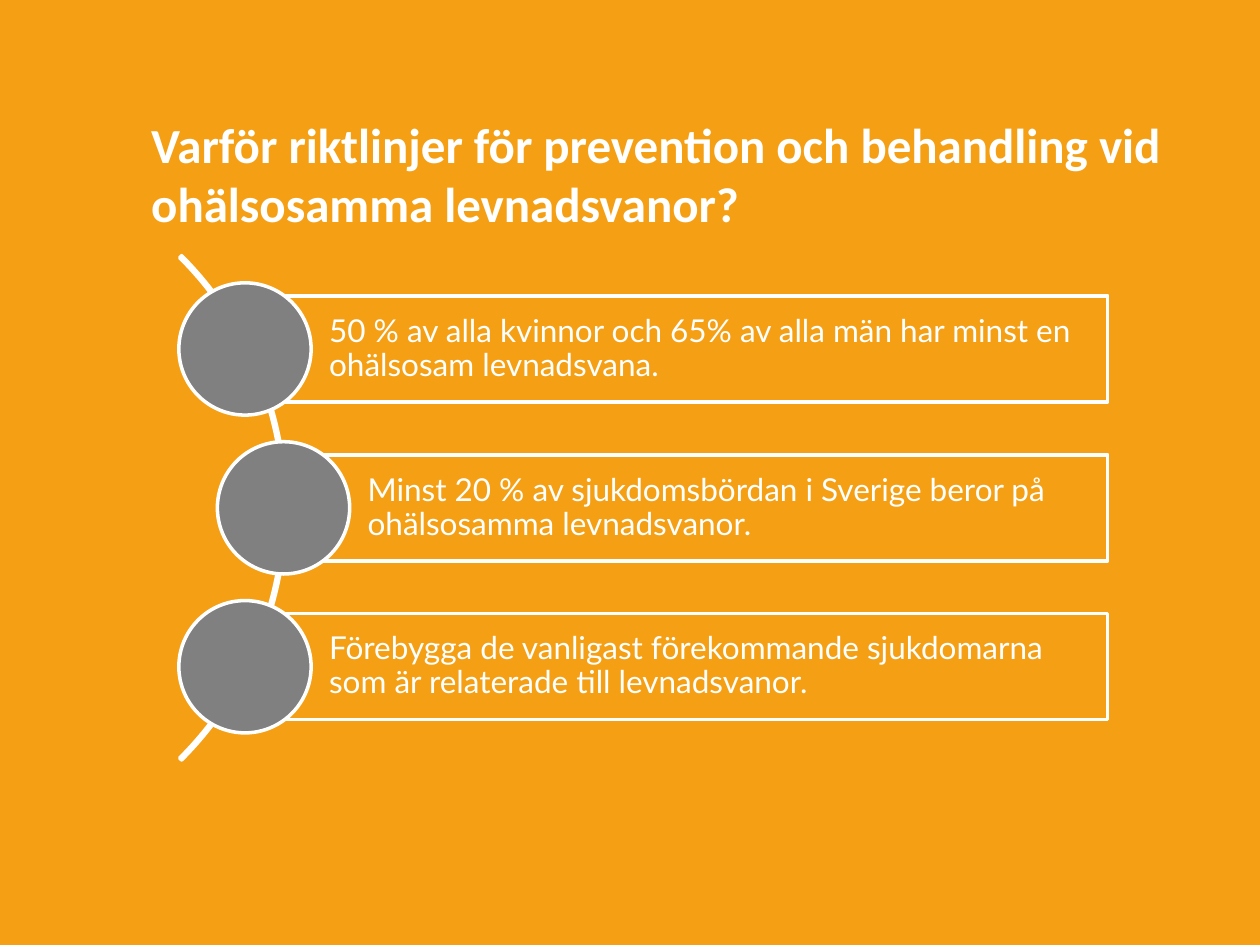
"""Build the slide on why there are guidelines for unhealthy living habits."""
from dataclasses import dataclass

from pptx import Presentation
from pptx.dml.color import RGBColor
from pptx.enum.shapes import MSO_SHAPE
from pptx.enum.text import MSO_ANCHOR, MSO_AUTO_SIZE, PP_ALIGN
from pptx.util import Pt

ARC, CIRCLE, BOX = MSO_SHAPE.BLOCK_ARC, MSO_SHAPE.OVAL, MSO_SHAPE.RECTANGLE
TOP, MIDDLE = MSO_ANCHOR.TOP, MSO_ANCHOR.MIDDLE
LEFT, NO_FIT = PP_ALIGN.LEFT, MSO_AUTO_SIZE.NONE

TITLE = "Varför riktlinjer för prevention och behandling vid ohälsosamma levnadsvanor?"
REASONS = [
    "50 % av alla kvinnor och 65% av alla män har minst en ohälsosam levnadsvana.",
    "Minst 20 % av sjukdomsbördan i Sverige beror på ohälsosamma levnadsvanor.",
    "Förebygga de vanligast förekommande sjukdomarna som är relaterade till levnadsvanor.",
]
CIRCLE_CENTERS_X = [140, 162, 140]
FIRST_CENTER_Y = 199.4
ROW_PITCH = 90.8
BOX_RIGHT = 633
BOX_HEIGHT = 60.6
CIRCLE_SIZE = 75.6
ARC_SIZE = 407.5


@dataclass(frozen=True)
class Theme:
    background: RGBColor = RGBColor(0xF5, 0xA0, 0x14)
    foreground: RGBColor = RGBColor(0xFF, 0xFF, 0xFF)
    circle: RGBColor = RGBColor(0x80, 0x80, 0x80)
    title_font: str = "Calibri"
    body_font: str = "Lato"
    title_size: float = 28
    body_size: float = 18
    line_width: float = 2


class SlideBuilder:
    def __init__(self, slide, theme):
        self.slide = slide
        self.theme = theme
        fill = slide.background.fill
        fill.solid()
        fill.fore_color.rgb = theme.background

    def set_text(self, text_frame, text, font_name, size, bold=False):
        text_frame.text = text
        text_frame.word_wrap = True
        text_frame.auto_size = NO_FIT
        paragraph = text_frame.paragraphs[0]
        paragraph.alignment = LEFT
        font = paragraph.runs[0].font
        font.name, font.size, font.bold = font_name, Pt(size), bold
        font.color.rgb = self.theme.foreground
        return paragraph

    def title(self, text, left, top, width, height):
        shape = self.slide.shapes.title
        shape.left, shape.top = Pt(left), Pt(top)
        shape.width, shape.height = Pt(width), Pt(height)
        shape.text_frame.vertical_anchor = TOP
        self.set_text(shape.text_frame, text, self.theme.title_font, self.theme.title_size, True)

    def outline(self, kind, left, top, width, height):
        shape = self.slide.shapes.add_shape(kind, Pt(left), Pt(top), Pt(width), Pt(height))
        shape.shadow.inherit = False
        shape.fill.background()
        shape.line.color.rgb = self.theme.foreground
        shape.line.width = Pt(self.theme.line_width)
        return shape

    def arc(self, left, center_y, size):
        shape = self.outline(ARC, left, center_y - size / 2, size, size)
        for index, value in enumerate((189, 27, 0.004)):
            shape.adjustments[index] = value

    def box(self, text, left, center_y, right, height):
        shape = self.outline(BOX, left, center_y - height / 2, right - left, height)
        text_frame = shape.text_frame
        text_frame.vertical_anchor = MIDDLE
        text_frame.margin_left = Pt(48.1)
        text_frame.margin_top = text_frame.margin_right = text_frame.margin_bottom = Pt(3.6)
        paragraph = self.set_text(text_frame, text, self.theme.body_font, self.theme.body_size)
        paragraph.line_spacing = 0.9

    def circle(self, center_x, center_y, size):
        shape = self.outline(CIRCLE, center_x - size / 2, center_y - size / 2, size, size)
        shape.fill.solid()
        shape.fill.fore_color.rgb = self.theme.circle


def main():
    presentation = Presentation()
    presentation.slide_width, presentation.slide_height = Pt(720), Pt(540)
    slide = presentation.slides.add_slide(presentation.slide_layouts[5])
    builder = SlideBuilder(slide, Theme())
    builder.title(TITLE, 79.2, 62, 615.6, 67)
    builder.arc(-244, FIRST_CENTER_Y + ROW_PITCH, ARC_SIZE)
    for row, (text, center_x) in enumerate(zip(REASONS, CIRCLE_CENTERS_X)):
        center_y = FIRST_CENTER_Y + row * ROW_PITCH
        builder.box(text, center_x, center_y, BOX_RIGHT, BOX_HEIGHT)
        builder.circle(center_x, center_y, CIRCLE_SIZE)
    presentation.save("out.pptx")


if __name__ == "__main__":
    main()
